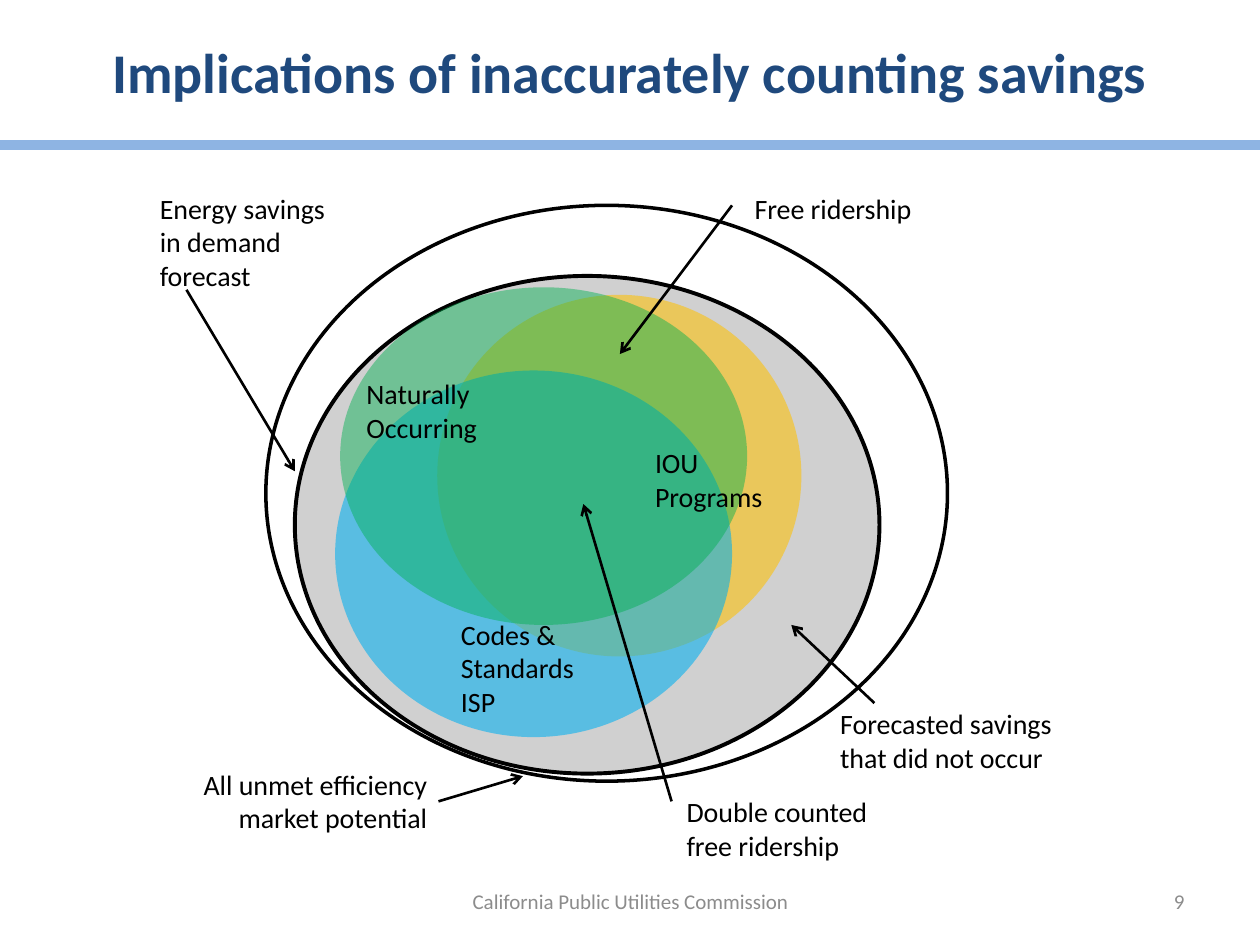
from lxml.etree import SubElement
from pptx import Presentation
from pptx.dml.color import RGBColor
from pptx.enum.shapes import MSO_CONNECTOR, MSO_SHAPE
from pptx.enum.text import MSO_ANCHOR, MSO_AUTO_SIZE, PP_ALIGN
from pptx.oxml.ns import qn
from pptx.util import Inches, Pt

BLACK = RGBColor(0x00, 0x00, 0x00)
NAVY = RGBColor(0x1F, 0x49, 0x7D)
LIGHT_BLUE = RGBColor(0x8E, 0xB4, 0xE3)
FOOTER_GRAY = RGBColor(0x8C, 0x8C, 0x8C)
FORECAST_GRAY = RGBColor(0xBF, 0xBF, 0xBF)
GOLD = RGBColor(0xFF, 0xC0, 0x00)
BLUE = RGBColor(0x00, 0xB0, 0xF0)
GREEN = RGBColor(0x00, 0xB0, 0x50)


def write(holder, text, size=16, color=BLACK, bold=False, align=PP_ALIGN.LEFT,
          anchor=MSO_ANCHOR.TOP, wrap=True):
    frame = holder.text_frame
    frame.text = text
    frame.word_wrap = wrap
    frame.auto_size = MSO_AUTO_SIZE.NONE
    frame.vertical_anchor = anchor
    for paragraph in frame.paragraphs:
        paragraph.alignment = align
        font = paragraph.font
        font.name = "Calibri"
        font.size = Pt(size)
        font.bold = bold
        font.color.rgb = color


def draw_line(start, end, color, width, arrow=False):
    line = slide.shapes.add_connector(
        MSO_CONNECTOR.STRAIGHT, *[Inches(value) for value in start + end])
    line.line.color.rgb = color
    line.line.width = Pt(width)
    if arrow:
        SubElement(line.line._get_or_add_ln(), qn("a:tailEnd"), type="arrow")
    SubElement(line._element.spPr, qn("a:effectLst"))


deck = Presentation()
deck.slide_width = Inches(10)
deck.slide_height = Inches(7.5)
slide = deck.slides.add_slide(deck.slide_layouts[5])

draw_line((0, 1.15), (10, 1.15), LIGHT_BLUE, 6)

title = slide.shapes.title
title.left, title.top, title.width, title.height = [
    Inches(value) for value in (0.5, 0.06, 9, 1.01)]
write(title, "Implications of inaccurately counting savings", size=32, color=NAVY,
      bold=True, align=PP_ALIGN.CENTER, anchor=MSO_ANCHOR.MIDDLE)

savings_sets = [
    ((2.34, 2.19, 4.64, 3.95), FORECAST_GRAY, 72, 2.25),
    ((3.47, 2.34, 2.89, 2.87), GOLD, 56, None),
    ((2.66, 2.94, 3.15, 2.91), BLUE, 57, None),
    ((2.70, 2.28, 3.23, 2.68), GREEN, 46, None),
    ((2.11, 1.63, 5.41, 4.57), None, None, 2),
]
for box, color, opacity, outline in savings_sets:
    ellipse = slide.shapes.add_shape(MSO_SHAPE.OVAL, *[Inches(value) for value in box])
    ellipse.shadow.inherit = False
    if color is None:
        ellipse.fill.background()
    else:
        ellipse.fill.solid()
        ellipse.fill.fore_color.rgb = color
        srgb = ellipse._element.spPr.find(qn("a:solidFill")).find(qn("a:srgbClr"))
        SubElement(srgb, qn("a:alpha"), val=str(opacity * 1000))
    if outline is None:
        ellipse.line.fill.background()
    else:
        ellipse.line.color.rgb = BLACK
        ellipse.line.width = Pt(outline)

pointers = [
    ((1.48, 2.30), (2.34, 3.74)),
    ((3.48, 6.36), (4.15, 6.16)),
    ((5.81, 1.63), (4.92, 2.81)),
    ((5.33, 6.36), (4.63, 4.00)),
    ((6.94, 5.58), (6.28, 4.96)),
]
for start, end in pointers:
    draw_line(start, end, BLACK, 1.5, arrow=True)

footer = dict(size=12, color=FOOTER_GRAY, anchor=MSO_ANCHOR.MIDDLE)
labels = [
    ((2.81, 2.94, 1.42, 0.64), "Naturally Occurring", {}),
    ((5.10, 3.49, 1.18, 0.64), "IOU Programs", {}),
    ((3.56, 4.85, 1.18, 0.91), "Codes & Standards ISP", {}),
    ((1.17, 1.47, 1.72, 0.91), "Energy savings in demand forecast", {}),
    ((1.48, 6.04, 2.01, 0.64), "All unmet efficiency market potential",
     dict(align=PP_ALIGN.RIGHT)),
    ((5.89, 1.47, 1.46, 0.37), "Free ridership", dict(wrap=False)),
    ((5.35, 6.26, 1.71, 0.64), "Double counted\nfree ridership", dict(wrap=False)),
    ((6.57, 5.56, 1.90, 0.64), "Forecasted savings\nthat did not occur", dict(wrap=False)),
    ((3.42, 6.95, 3.17, 0.40), "California Public Utilities Commission",
     dict(footer, align=PP_ALIGN.CENTER)),
    ((7.17, 6.95, 2.33, 0.40), "9", dict(footer, align=PP_ALIGN.RIGHT)),
]
for box, text, style in labels:
    label = slide.shapes.add_textbox(*[Inches(value) for value in box])
    write(label, text, **style)

deck.save("out.pptx")
